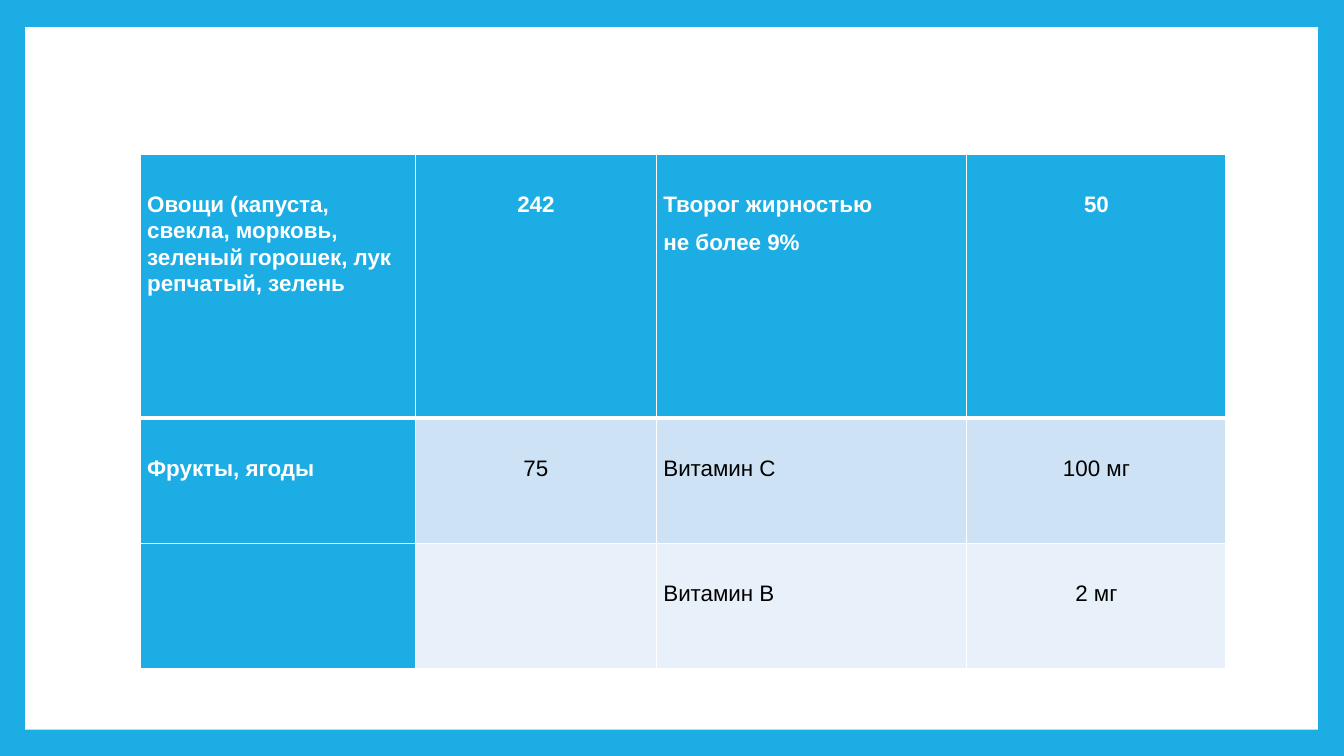
from lxml import etree
from pptx import Presentation
from pptx.dml.color import RGBColor
from pptx.enum.shapes import MSO_SHAPE as Shape
from pptx.enum.text import PP_ALIGN as Align
from pptx.oxml.ns import qn
from pptx.util import Inches, Pt

BLUE = RGBColor(0x1C, 0xAD, 0xE4)
WHITE = RGBColor(0xFF, 0xFF, 0xFF)
BLACK = RGBColor(0, 0, 0)
BAND_DARK = RGBColor(0xCD, 0xE3, 0xF5)
BAND_LIGHT = RGBColor(0xE8, 0xF1, 0xFA)

COLUMN_WIDTHS = [2.73, 2.39, 3.08, 2.57]
ROW_HEIGHTS = [2.62, 1.24, 1.24]
ROW_FILLS = [BLUE, BAND_DARK, BAND_LIGHT]
FOODS = [
    ["Овощи (капуста, свекла, морковь, зеленый горошек, лук репчатый, зелень",
     "242", "Творог жирностью\nне более 9%", "50"],
    ["Фрукты, ягоды", "75", "Витамин С", "100 мг"],
    ["", "", "Витамин В", "2 мг"],
]

CELL_MARGINS = {
    "margin_left": Inches(0.07),
    "margin_right": Inches(0.07),
    "margin_top": Inches(0.37),
    "margin_bottom": Inches(0),
}
PARAGRAPH_FORMAT = {"line_spacing": 1.05, "space_after": Pt(8)}


def set_attributes(target, values):
    for name, value in values.items():
        setattr(target, name, value)


def add_white_panel(slide):
    panel = slide.shapes.add_shape(
        Shape.RECTANGLE, Inches(0.25), Inches(0.27), Inches(12.82), Inches(6.97))
    panel.shadow.inherit = False
    panel.fill.solid()
    panel.fill.fore_color.rgb = WHITE
    panel.line.fill.background()


def set_borders(cell, widths):
    """Draw white cell borders; widths maps a side to points."""
    properties = cell._tc.get_or_add_tcPr()
    for position, side in enumerate("LRTB"):
        line = etree.Element(qn(f"a:ln{side}"), w=str(Pt(widths.get(side, 1))))
        fill = etree.SubElement(line, qn("a:solidFill"))
        etree.SubElement(fill, qn("a:srgbClr"), val=str(WHITE))
        properties.insert(position, line)


def fill_cell(cell, text, fill, is_heading, alignment):
    set_attributes(cell, CELL_MARGINS)
    cell.fill.solid()
    cell.fill.fore_color.rgb = fill
    cell.text = text
    font_format = {"name": "Arial", "size": Pt(16), "bold": is_heading}
    for paragraph in cell.text_frame.paragraphs:
        set_attributes(paragraph, PARAGRAPH_FORMAT)
        paragraph.alignment = alignment
        set_attributes(paragraph.font, font_format)
        for run in paragraph.runs:
            set_attributes(run.font, font_format)
            run.font.color.rgb = WHITE if is_heading else BLACK


def add_food_table(slide):
    table = slide.shapes.add_table(
        len(ROW_HEIGHTS), len(COLUMN_WIDTHS), Inches(1.39), Inches(1.53),
        Inches(sum(COLUMN_WIDTHS)), Inches(sum(ROW_HEIGHTS))).table
    for column, width in zip(table.columns, COLUMN_WIDTHS):
        column.width = Inches(width)
    for row, height in zip(table.rows, ROW_HEIGHTS):
        row.height = Inches(height)

    # A thick rule separates the first row from the rest
    thick_sides = [{"B": 3}, {"T": 3}, {}]
    for row_index, texts in enumerate(FOODS):
        for column_index, text in enumerate(texts):
            cell = table.cell(row_index, column_index)
            is_heading = row_index == 0 or column_index == 0
            fill = BLUE if is_heading else ROW_FILLS[row_index]
            alignment = Align.CENTER if column_index % 2 else Align.LEFT
            fill_cell(cell, text, fill, is_heading, alignment)
            set_borders(cell, thick_sides[row_index])


def main():
    presentation = Presentation()
    presentation.slide_width = Inches(13.33)
    presentation.slide_height = Inches(7.5)
    slide = presentation.slides.add_slide(presentation.slide_layouts[6])

    # Blue frame around a white panel
    slide.background.fill.solid()
    slide.background.fill.fore_color.rgb = BLUE
    add_white_panel(slide)

    # Daily amounts of foods and vitamins
    add_food_table(slide)
    presentation.save("out.pptx")


if __name__ == "__main__":
    main()
